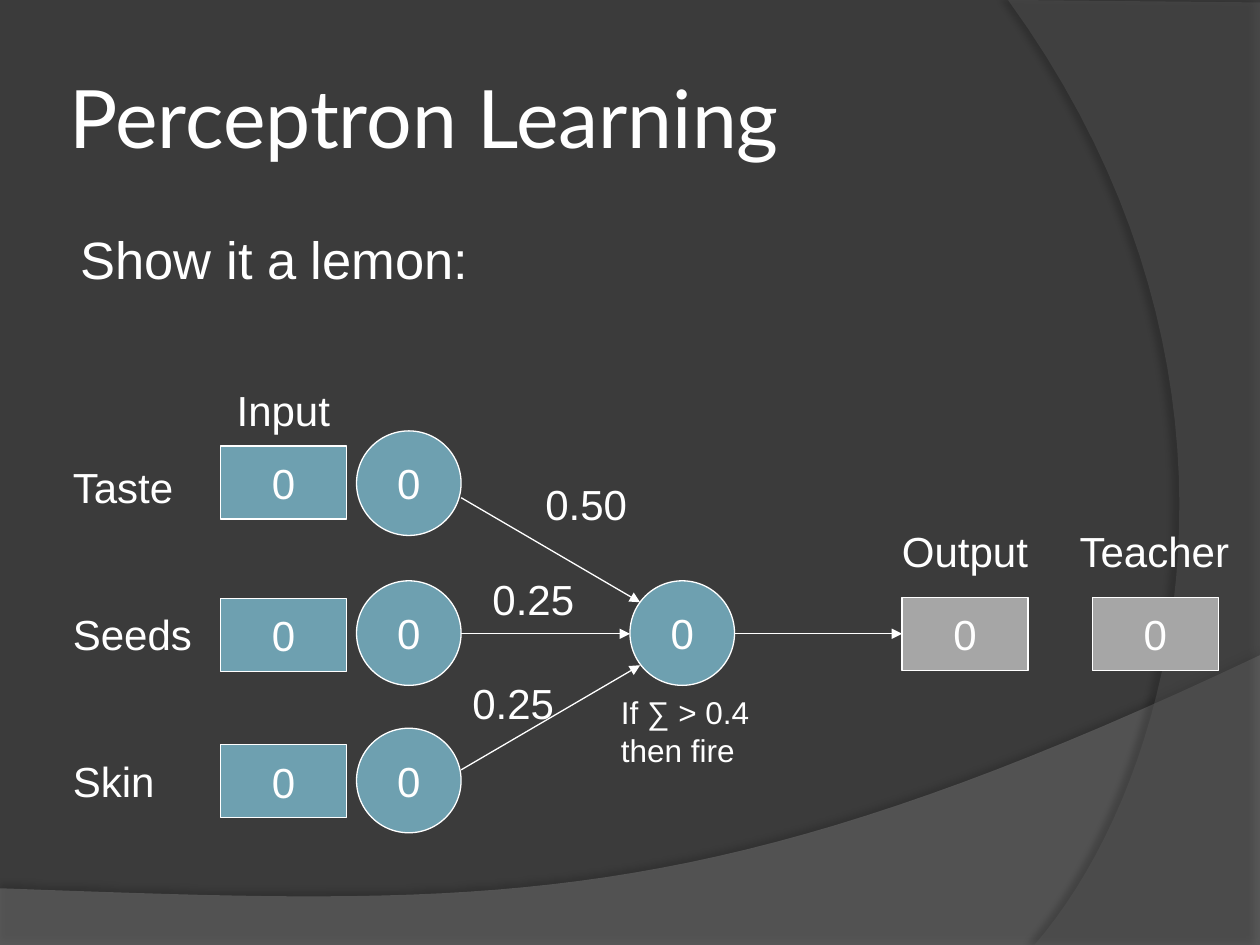
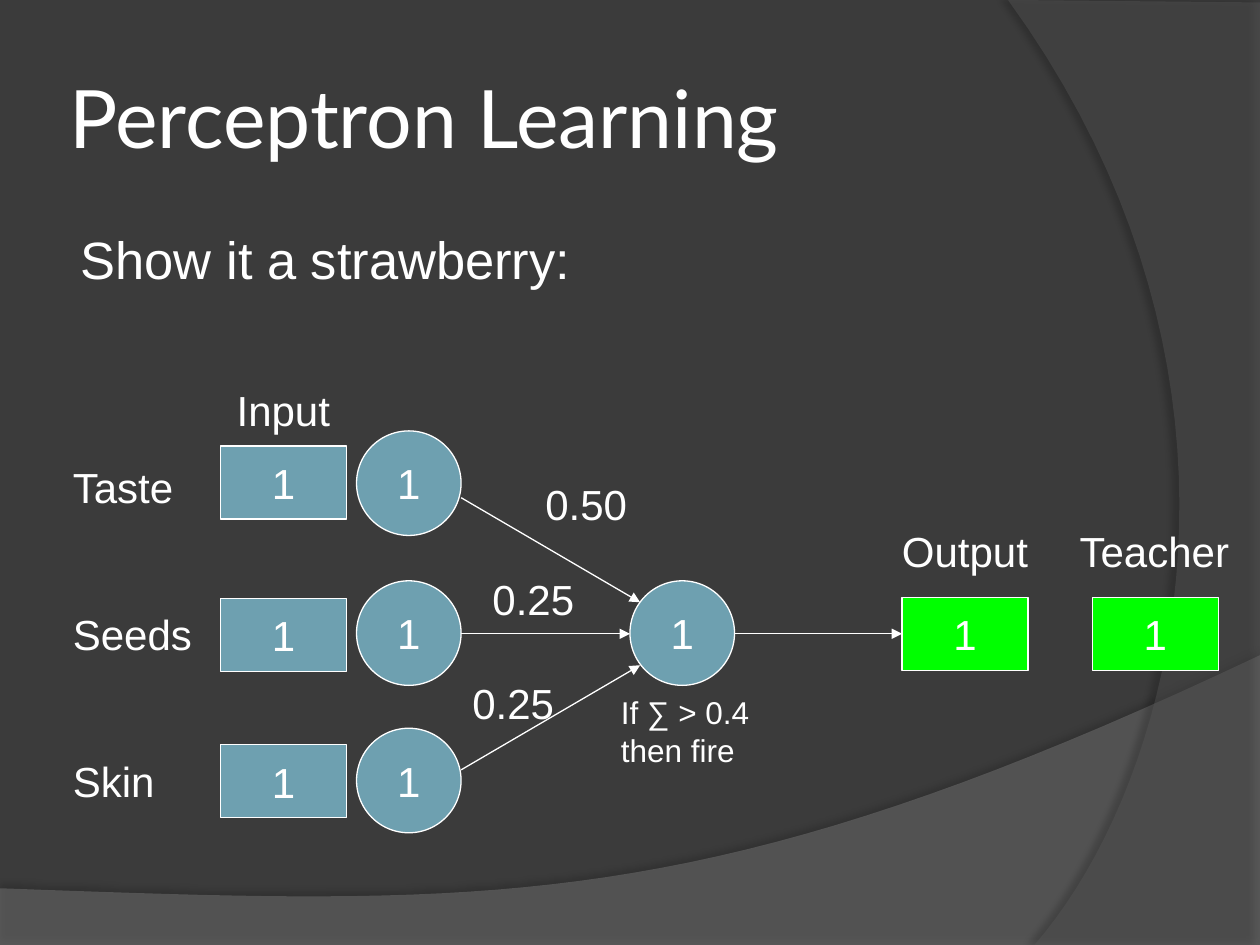
import dataclasses
import typing

import lxml.etree
import pptx
import pptx.dml.color
import pptx.enum.shapes
import pptx.enum.text
import pptx.oxml.ns
import pptx.util

Inches = pptx.util.Inches
Pt = pptx.util.Pt
Shapes = pptx.enum.shapes.MSO_SHAPE
Align = pptx.enum.text.PP_ALIGN
Anchor = pptx.enum.text.MSO_ANCHOR
qn = pptx.oxml.ns.qn

COLORS = {
    "back": "3B3B3B", "wave": "7C7C7C", "arc": "595959", "shade": "000000",
    "text": "FFFFFF", "node": "6EA0B0", "off": "A6A6A6", "on": "00FF00",
}
NODE = 0.83
BOX_W, BOX_H = 1, 0.58
NODE_X, UNIT_X, UNIT_Y = 2.83, 5, 4.61
INPUT_X, OUT_X, TEACH_X, OUT_Y = 1.75, 7.16, 8.67, 4.74
MID_Y = 5.03


class Label(typing.NamedTuple):
    text: str
    x: float
    y: float
    w: float
    h: float = 0.5
    size: int = 24


class Row(typing.NamedTuple):
    box_y: float
    node_y: float


class Arrow(typing.NamedTuple):
    x1: float
    y1: float
    x2: float
    y2: float


class Band(typing.NamedTuple):
    """Outline: straight points, then a curve given by its four controls."""
    points: list
    curve: list
    color: str
    alpha: int
    shade: int
    dist: float
    angle: int


@dataclasses.dataclass
class Case:
    fruit: str
    value: str
    lamp: str


CASES = [Case("lemon", "0", "off"), Case("strawberry", "1", "on")]
ROWS = [Row(3.54, 3.42), Row(4.75, 4.61), Row(5.91, 5.78)]
ARROWS = [
    Arrow(NODE_X + NODE, 3.95, 5.08, 4.78),
    Arrow(NODE_X + NODE, 6.11, 5.08, 5.28),
    Arrow(NODE_X + NODE, MID_Y, UNIT_X, MID_Y),
    Arrow(UNIT_X + NODE, MID_Y, OUT_X, MID_Y),
]
LABELS = [
    Label("If ∑ > 0.4\nthen fire", 4.83, 5.45, 1.37, 0.7, 18),
    Label("0.50", 4.23, 3.75, 0.85),
    Label("0.25", 3.81, 4.5, 0.85),
    Label("0.25", 3.65, 5.33, 0.85),
    Label("Input", 1.78, 3, 0.94),
    Label("Output", 7.06, 4.12, 1.2),
    Label("Teacher", 8.47, 4.12, 1.4),
    Label("Taste", 0.48, 3.61, 1.03),
    Label("Seeds", 0.48, 4.78, 1.15),
    Label("Skin", 0.48, 5.95, 0.85),
]
BANDS = [
    Band([(0, 7.05), (0, 7.51), (10, 7.51)],
         [(10, 5.2), (5.59, 7.29), (3.91, 7.19), (0, 7.05)],
         "wave", 45, 35, 3.5, 270),
    Band([(10, 0.02), (10, 7.5)],
         [(8.21, 7.5), (9.35, 6.19), (10.18, 3), (8, 0)],
         "arc", 40, 45, 4, 180),
]


def rgb(name: str) -> pptx.dml.color.RGBColor:
    return pptx.dml.color.RGBColor.from_string(COLORS[name])


def add_sub(parent, tag: str, **attrs):
    return lxml.etree.SubElement(
        parent, qn(tag), {key: str(val) for key, val in attrs.items()})


def style(frame, size: int, font: str = "Arial", align=Align.LEFT) -> None:
    for para in frame.paragraphs:
        para.alignment = align
        for run in para.runs:
            run.font.size = Pt(size)
            run.font.name = font
            run.font.color.rgb = rgb("text")


def place(shape, x: float, y: float, w: float, h: float) -> None:
    shape.left, shape.top = Inches(x), Inches(y)
    shape.width, shape.height = Inches(w), Inches(h)


def bezier(curve: list, steps: int = 40) -> list:
    """Points along a cubic curve, both ends included."""
    spots = []
    for step in range(steps + 1):
        t = step / steps
        mix = ((1 - t) ** 3, 3 * t * (1 - t) ** 2, 3 * t * t * (1 - t), t ** 3)
        spots.append(tuple(sum(m * p[axis] for m, p in zip(mix, curve))
                           for axis in (0, 1)))
    return spots


def add_band(slide, band: Band):
    spots = [(Inches(x), Inches(y))
             for x, y in band.points + bezier(band.curve)]
    pen = slide.shapes.build_freeform(*spots[0])
    pen.add_line_segments(spots[1:], close=True)
    shape = pen.convert_to_shape()
    shape.fill.solid()
    shape.fill.fore_color.rgb = rgb(band.color)
    tint = shape.element.spPr.find(".//" + qn("a:srgbClr"))
    add_sub(tint, "a:alpha", val=band.alpha * 1000)
    shape.line.fill.background()
    shape.shadow.inherit = False
    effects = shape.element.spPr.find(qn("a:effectLst"))
    glow = add_sub(effects, "a:outerShdw", blurRad=int(Pt(4)),
                   dist=int(Pt(band.dist)), dir=band.angle * 60000,
                   algn="ctr", rotWithShape=0)
    dark = add_sub(glow, "a:srgbClr", val=COLORS["shade"])
    add_sub(dark, "a:alpha", val=band.shade * 1000)
    return shape


def set_theme(layout, slide) -> None:
    """Move the bands behind everything on the layout, over a flat ground."""
    layout.background.fill.solid()
    layout.background.fill.fore_color.rgb = rgb("back")
    for num, band in enumerate(BANDS):
        shape = add_band(slide, band)
        shape.element.nvSpPr.cNvPr.set("id", str(100 + num))
        layout.shapes.element.insert(2 + num, shape.element)


def add_cell(slide, kind, x: float, y: float, w: float, h: float,
             value: str, color: str) -> None:
    shape = slide.shapes.add_shape(
        kind, Inches(x), Inches(y), Inches(w), Inches(h))
    shape.shadow.inherit = False
    shape.fill.solid()
    shape.fill.fore_color.rgb = rgb(color)
    shape.line.color.rgb = rgb("text")
    shape.line.width = Pt(0.75)
    frame = shape.text_frame
    frame.text = value
    frame.word_wrap = False
    frame.vertical_anchor = Anchor.MIDDLE
    style(frame, 24, align=Align.CENTER)


def add_node(slide, x: float, y: float, value: str) -> None:
    add_cell(slide, Shapes.OVAL, x, y, NODE, NODE, value, "node")


def add_box(slide, x: float, y: float, value: str, color: str) -> None:
    add_cell(slide, Shapes.RECTANGLE, x, y, BOX_W, BOX_H, value, color)


def add_arrow(slide, arrow: Arrow) -> None:
    line = slide.shapes.add_connector(
        pptx.enum.shapes.MSO_CONNECTOR.STRAIGHT,
        *(Inches(val) for val in arrow))
    line.line.color.rgb = rgb("text")
    line.line.width = Pt(0.75)
    add_sub(line.element.spPr.find(qn("a:ln")), "a:tailEnd", type="triangle")
    add_sub(line.element.spPr, "a:effectLst")


def add_label(slide, label: Label) -> None:
    box = slide.shapes.add_textbox(
        *(Inches(val) for val in (label.x, label.y, label.w, label.h)))
    frame = box.text_frame
    frame.text = label.text
    frame.word_wrap = False
    frame.auto_size = pptx.enum.text.MSO_AUTO_SIZE.SHAPE_TO_FIT_TEXT
    style(frame, label.size)


def set_heads(slide, fruit: str) -> None:
    title, body = slide.shapes.title, slide.placeholders[1]
    place(title, 0.5, 0.3, 8.17, 1.25)
    frame = title.text_frame
    frame.text = "Perceptron Learning"
    frame.vertical_anchor = Anchor.MIDDLE
    frame.margin_left = frame.margin_right = Inches(0.05)
    frame.margin_top = frame.margin_bottom = Inches(0.05)
    style(frame, 46, "Lato")

    place(body, 0.5, 1.75, 8.17, 4.95)
    body.text_frame.text = f"Show it a {fruit}:"
    style(body.text_frame, 30)
    para = body.text_frame.paragraphs[0]
    para.space_before = Pt(6)
    props = para._p.get_or_add_pPr()
    props.set("marL", str(Inches(0.46)))
    props.set("indent", str(Inches(-0.42)))
    add_sub(props, "a:buNone")


def add_net(slide, case: Case) -> None:
    for row in ROWS:
        add_box(slide, INPUT_X, row.box_y, case.value, "node")
        add_node(slide, NODE_X, row.node_y, case.value)
    add_node(slide, UNIT_X, UNIT_Y, case.value)
    for x in (OUT_X, TEACH_X):
        add_box(slide, x, OUT_Y, case.value, case.lamp)
    for arrow in ARROWS:
        add_arrow(slide, arrow)
    for label in LABELS:
        add_label(slide, label)


def main() -> None:
    deck = pptx.Presentation()
    deck.slide_width, deck.slide_height = Inches(10), Inches(7.5)
    layout = deck.slide_layouts[1]
    slides = [deck.slides.add_slide(layout) for _ in CASES]
    set_theme(layout, slides[0])
    for slide, case in zip(slides, CASES):
        set_heads(slide, case.fruit)
        add_net(slide, case)
    deck.save("out.pptx")


if __name__ == "__main__":
    main()
